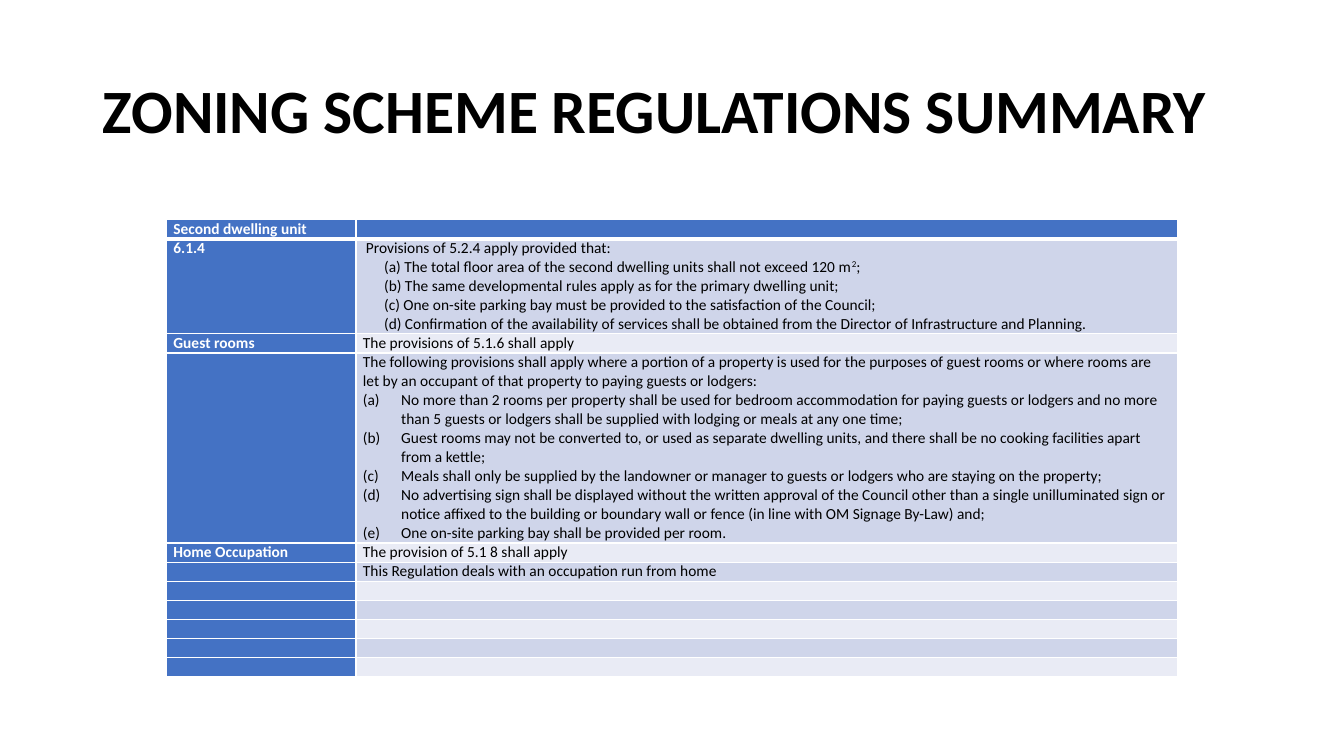
from dataclasses import dataclass
from typing import Any

from pptx import Presentation
from pptx.dml.color import RGBColor
from pptx.enum.text import MSO_ANCHOR, PP_ALIGN
from pptx.oxml.ns import qn
from pptx.oxml.xmlchemy import OxmlElement
from pptx.util import Inches, Pt

COLORS = {"label": "4472C4", "odd": "CFD5EA", "even": "E9EBF5",
          "border": "FFFFFF", "label_text": "FFFFFF", "text": "000000"}
TEXT_SIZE = 11
TABLE_HEIGHT = 4.52
COLUMN_WIDTHS = (1.88, 8.15)
CELL_FORMAT = {"margin_left": Inches(0.07), "margin_right": Inches(0.07),
               "margin_top": 0, "margin_bottom": 0}
TITLE_FORMAT = {"left": Inches(0.92), "top": Inches(0.4),
                "width": Inches(11.5), "height": Inches(1.45)}


@dataclass(frozen=True)
class Clause:
    text: str
    indent: float = 0
    numbered: bool = False
    superscript: str = ""
    ending: str = ""


@dataclass(frozen=True)
class Regulation:
    label: str = ""
    clauses: tuple[Clause, ...] = ()
    lines: int = 1


REGULATIONS = [
    Regulation("Second dwelling unit"),
    Regulation("6.1.4", (
        Clause("Provisions of 5.2.4 apply provided that:", 0.03),
        Clause("(a) The total floor area of the second dwelling units shall not exceed 120 m",
               0.21, superscript="2", ending=";"),
        Clause("(b) The same developmental rules apply as for the primary dwelling unit;", 0.21),
        Clause("(c) One on-site parking bay must be provided to the satisfaction of the Council;", 0.21),
        Clause("(d) Confirmation of the availability of services shall be obtained from the "
               "Director of Infrastructure and Planning.", 0.21),
    ), lines=5),
    Regulation("Guest rooms", (Clause("The provisions of 5.1.6 shall apply"),)),
    Regulation("", (
        Clause("The following provisions shall apply where a portion of a property is used for the "
               "purposes of guest rooms or where rooms are let by an occupant of that property to "
               "paying guests or lodgers:"),
        Clause("No more than 2 rooms per property shall be used for bedroom accommodation for paying "
               "guests or lodgers and no more than 5 guests or lodgers shall be supplied with lodging "
               "or meals at any one time;", 0.38, True),
        Clause("Guest rooms may not be converted to, or used as separate dwelling units, and there "
               "shall be no cooking facilities apart from a kettle;", 0.38, True),
        Clause("Meals shall only be supplied by the landowner or manager to guests or lodgers who are "
               "staying on the property;", 0.38, True),
        Clause("No advertising sign shall be displayed without the written approval of the Council "
               "other than a single unilluminated sign or notice affixed to the building or boundary "
               "wall or fence (in line with OM Signage By-Law) and;", 0.38, True),
        Clause("One on-site parking bay shall be provided per room.", 0.38, True),
    ), lines=10),
    Regulation("Home Occupation", (Clause("The provision of 5.1 8 shall apply"),)),
    Regulation("", (Clause("This Regulation deals with an occupation run from home"),)),
    *[Regulation()] * 5,
]


def apply_format(target: Any, values: dict[str, Any]) -> None:
    for name, value in values.items():
        setattr(target, name, value)


def add_run(paragraph: Any, text: str, size: float, color: str, bold: bool) -> Any:
    run = paragraph.add_run()
    run.text = text
    apply_format(run.font, {"name": "Calibri", "size": Pt(size), "bold": bold})
    run.font.color.rgb = RGBColor.from_string(COLORS[color])
    return run


def add_borders(cell: Any, bottom_width: float) -> None:
    properties = cell._tc.get_or_add_tcPr()
    for side, width in (("L", 1), ("R", 1), ("T", 1), ("B", bottom_width)):
        line = OxmlElement(f"a:ln{side}")
        line.set("w", str(Pt(width)))
        fill = OxmlElement("a:solidFill")
        color = OxmlElement("a:srgbClr")
        color.set("val", COLORS["border"])
        fill.append(color)
        line.append(fill)
        properties.append(line)


def indent_clause(paragraph: Any, clause: Clause) -> None:
    properties = paragraph._p.get_or_add_pPr()
    properties.set("marL", str(Inches(clause.indent)))
    if clause.numbered:
        properties.set("indent", str(-Inches(clause.indent)))
        numbering = OxmlElement("a:buAutoNum")
        numbering.set("type", "alphaLcParenBoth")
        properties.append(numbering)


def fill_cell(cell: Any, clauses: tuple[Clause, ...], fill: str, is_label: bool,
              bottom_width: float) -> None:
    add_borders(cell, bottom_width)
    apply_format(cell, CELL_FORMAT)
    cell.fill.solid()
    cell.fill.fore_color.rgb = RGBColor.from_string(COLORS[fill])
    style = (TEXT_SIZE, "label_text" if is_label else "text", is_label)
    frame = cell.text_frame
    for index, clause in enumerate(clauses):
        paragraph = frame.add_paragraph() if index else frame.paragraphs[0]
        indent_clause(paragraph, clause)
        add_run(paragraph, clause.text, *style)
        if clause.superscript:
            raised = add_run(paragraph, clause.superscript, *style)
            raised.font._element.set("baseline", "30000")
            add_run(paragraph, clause.ending, *style)
    if not clauses:
        # An empty cell keeps the text size so its row stays low
        paragraph_xml = frame.paragraphs[0]._p
        for old_end in paragraph_xml.findall(qn("a:endParaRPr")):
            paragraph_xml.remove(old_end)
        end = OxmlElement("a:endParaRPr")
        end.set("sz", str(TEXT_SIZE * 100))
        paragraph_xml.append(end)


def add_title(slide: Any) -> None:
    title = slide.shapes.title
    apply_format(title, TITLE_FORMAT)
    title.text_frame.vertical_anchor = MSO_ANCHOR.MIDDLE
    heading = title.text_frame.paragraphs[0]
    apply_format(heading, {"alignment": PP_ALIGN.LEFT, "line_spacing": 0.9})
    add_run(heading, "ZONING SCHEME REGULATIONS SUMMARY", 44, "text", True)


def add_regulations(slide: Any) -> None:
    table = slide.shapes.add_table(
        len(REGULATIONS), len(COLUMN_WIDTHS), Inches(1.65), Inches(2.18),
        Inches(sum(COLUMN_WIDTHS)), Inches(TABLE_HEIGHT)).table
    table.first_col = True
    for column, width in zip(table.columns, COLUMN_WIDTHS):
        column.width = Inches(width)
    line_height = TABLE_HEIGHT / sum(regulation.lines for regulation in REGULATIONS)
    for index, regulation in enumerate(REGULATIONS):
        table.rows[index].height = Inches(line_height * regulation.lines)
        label = (Clause(regulation.label),) if regulation.label else ()
        band = "label" if index == 0 else "odd" if index % 2 else "even"
        bottom_width = 1 if index else 3
        fill_cell(table.cell(index, 0), label, "label", True, bottom_width)
        fill_cell(table.cell(index, 1), regulation.clauses, band, False, bottom_width)


def main() -> None:
    presentation = Presentation()
    apply_format(presentation, {"slide_width": Inches(13.33), "slide_height": Inches(7.5)})
    slide = presentation.slides.add_slide(presentation.slide_layouts[5])
    # Heading
    add_title(slide)
    # Regulations table
    add_regulations(slide)
    presentation.save("out.pptx")


if __name__ == "__main__":
    main()
